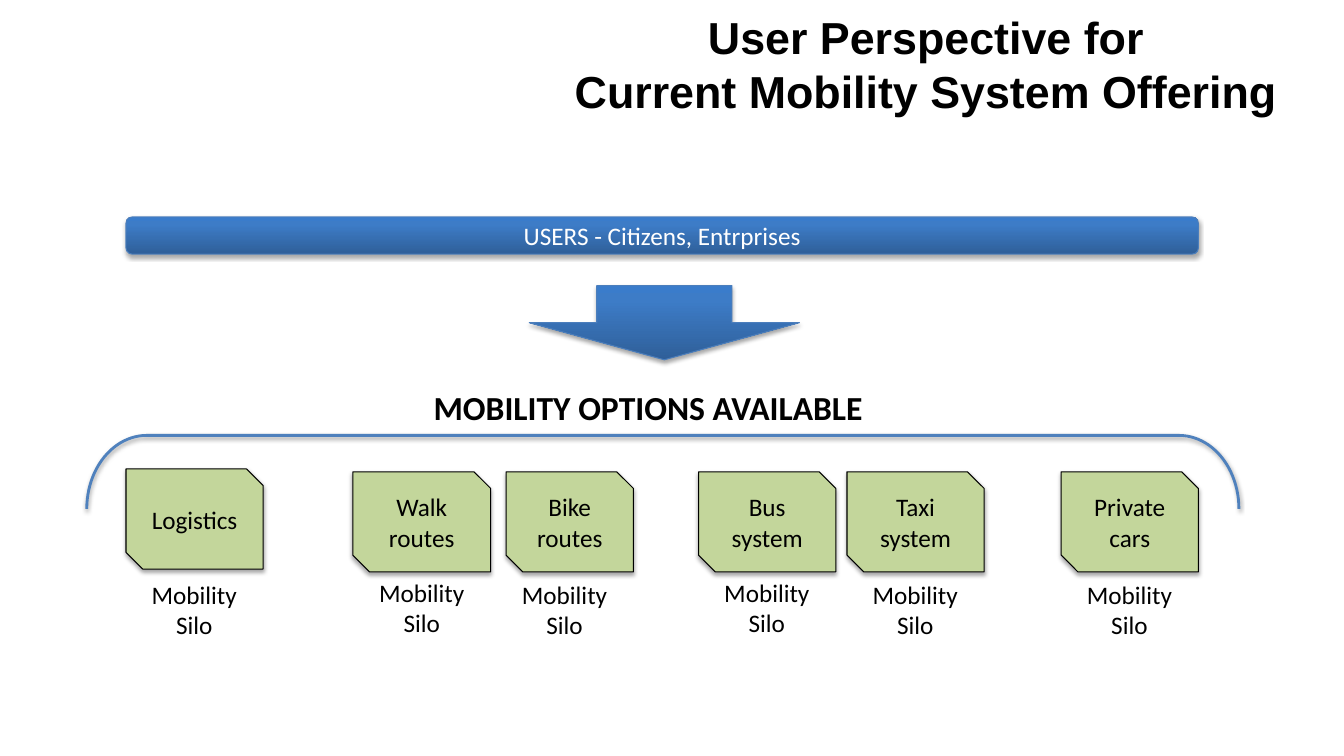
from dataclasses import dataclass
from lxml import etree
from pptx import Presentation
from pptx.dml.color import RGBColor
from pptx.enum.shapes import MSO_SHAPE as Preset
from pptx.enum.text import MSO_ANCHOR as Anchor, PP_ALIGN as Align
from pptx.oxml.ns import qn
from pptx.util import Pt


@dataclass(frozen=True)
class Theme:
    """Colours, fonts and type sizes of the slide."""
    ink: str = "000000"
    paper: str = "FFFFFF"
    silo: str = "C3D69B"
    blue_line: str = "4B7EBC"
    bracket: str = "4F81BD"
    gradient: tuple = ((0, "2F5F99"), (80, "3D7CC7"), (100, "3A7CCB"))
    title_font: str = "Arial"
    body_font: str = "Calibri"
    title_size: int = 32
    heading_size: int = 24
    body_size: int = 18


@dataclass(frozen=True)
class Box:
    """A rectangle measured in points."""
    left: float
    top: float
    width: float
    height: float

    def lengths(self):
        """Return the four sides as lengths."""
        return [Pt(side) for side in (self.left, self.top, self.width, self.height)]


THEME = Theme()
CAPTION_WIDTH = 98.5
SILOS = (
    ("Logistics", 0, 0, 98, 75),
    ("Walk routes", 162, 2, 98.5, 73.5),
    ("Bike routes", 271.5, 2, 91, 75),
    ("Bus system", 409, 2, 98, 73.5),
    ("Taxi system", 515, 2, 98, 75),
    ("Private cars", 668, 2, 98, 75),
)


def write(frame, text, size, color=THEME.ink, font=THEME.body_font, bold=False):
    """Fill a text frame with one centred paragraph and return it."""
    frame.word_wrap = True
    paragraph = frame.paragraphs[0]
    paragraph.text = text
    paragraph.alignment = Align.CENTER
    paragraph.font.name = font
    paragraph.font.size = Pt(size)
    paragraph.font.bold = bold
    paragraph.font.color.rgb = RGBColor.from_string(color)
    return paragraph


def add_caption(slide, box, text, size, bold=False):
    """Add a plain text box and return its paragraph."""
    frame = slide.shapes.add_textbox(*box.lengths()).text_frame
    return write(frame, text, size, bold=bold)


def add_color(parent, color):
    """Append an RGB colour element and return it."""
    return etree.SubElement(parent, qn("a:srgbClr"), val=color)


def add_preset(slide, preset, box, line, weight=0.75, opacity=35, distance=1.8):
    """Add an outlined preset shape with a soft shadow below it."""
    shape = slide.shapes.add_shape(preset, *box.lengths())
    shape.line.color.rgb = RGBColor.from_string(line)
    shape.line.width = Pt(weight)
    shape.shadow.inherit = False
    effects = shape._element.spPr.find(qn("a:effectLst"))
    shadow = etree.SubElement(
        effects, qn("a:outerShdw"), blurRad=str(Pt(3.1)), dist=str(Pt(distance)),
        dir="5400000", rotWithShape="0")
    etree.SubElement(add_color(shadow, THEME.ink), qn("a:alpha"), val=str(opacity * 1000))
    shape.text_frame.vertical_anchor = Anchor.MIDDLE
    return shape


def add_blue(slide, preset, box):
    """Add a shape with the blue gradient running upwards."""
    shape = add_preset(slide, preset, box, THEME.blue_line)
    shape.fill.gradient()
    shape.fill.gradient_angle = 90
    stops = shape._element.spPr.find(qn("a:gradFill")).find(qn("a:gsLst"))
    for stop in list(stops):
        stops.remove(stop)
    for position, color in THEME.gradient:
        add_color(etree.SubElement(stops, qn("a:gs"), pos=str(position * 1000)), color)
    return shape


def draw_title(slide, box):
    """Place the slide title."""
    title = slide.shapes.title
    title.left, title.top, title.width, title.height = box.lengths()
    title.text_frame.vertical_anchor = Anchor.MIDDLE
    write(title.text_frame, "User Perspective for\vCurrent Mobility System Offering",
          THEME.title_size, font=THEME.title_font, bold=True)


def draw_users(slide, box):
    """Draw the users bar with the arrow pointing down from it."""
    users = add_blue(slide, Preset.ROUNDED_RECTANGLE, Box(box.left, box.top, box.width, 26.5))
    write(users.text_frame, "USERS - Citizens, Entrprises", THEME.body_size, THEME.paper)
    add_blue(slide, Preset.DOWN_ARROW, Box(box.left + 288, box.top + 49, 193, box.height - 49))


def draw_bracket(slide, box):
    """Draw the bracket that opens downwards over the options."""
    upright = Box(box.left + (box.width - box.height) / 2,
                  box.top + (box.height - box.width) / 2, box.height, box.width)
    bracket = add_preset(slide, Preset.RIGHT_BRACKET, upright, THEME.bracket, 2, 38, 1.6)
    bracket.adjustments[0] = 0.816
    bracket.rotation = 270
    bracket.fill.background()


def draw_heading(slide, box):
    """Write the heading of the options."""
    heading = add_caption(slide, box, "MOBILITY OPTIONS AVAILABLE", THEME.heading_size, bold=True)
    heading.line_spacing = 2.29


def draw_silos(slide, box):
    """Draw each mobility option with its caption aligned to its right side."""
    for option, offset, drop, width, caption_drop in SILOS:
        card_box = Box(box.left + offset, box.top + drop, width, 71.5)
        card = add_preset(slide, Preset.SNIP_2_DIAG_RECTANGLE, card_box, THEME.ink)
        card.fill.solid()
        card.fill.fore_color.rgb = RGBColor.from_string(THEME.silo)
        write(card.text_frame, option, THEME.body_size)
        caption_box = Box(card_box.left + width - CAPTION_WIDTH, box.top + caption_drop,
                          CAPTION_WIDTH, box.height - caption_drop)
        add_caption(slide, caption_box, "Mobility Silo", THEME.body_size)


def main():
    """Build and save the slide."""
    deck = Presentation()
    deck.slide_width, deck.slide_height = Pt(960), Pt(540)
    slide = deck.slides.add_slide(deck.slide_layouts[5])
    draw_title(slide, Box(386, -7, 551, 104.5))
    draw_users(slide, Box(90, 155, 766, 102))
    draw_bracket(slide, Box(62, 311, 823, 52.5))
    draw_heading(slide, Box(263, 235.5, 400, 75))
    draw_silos(slide, Box(90, 335, 766, 126))
    deck.save("out.pptx")


if __name__ == "__main__":
    main()
